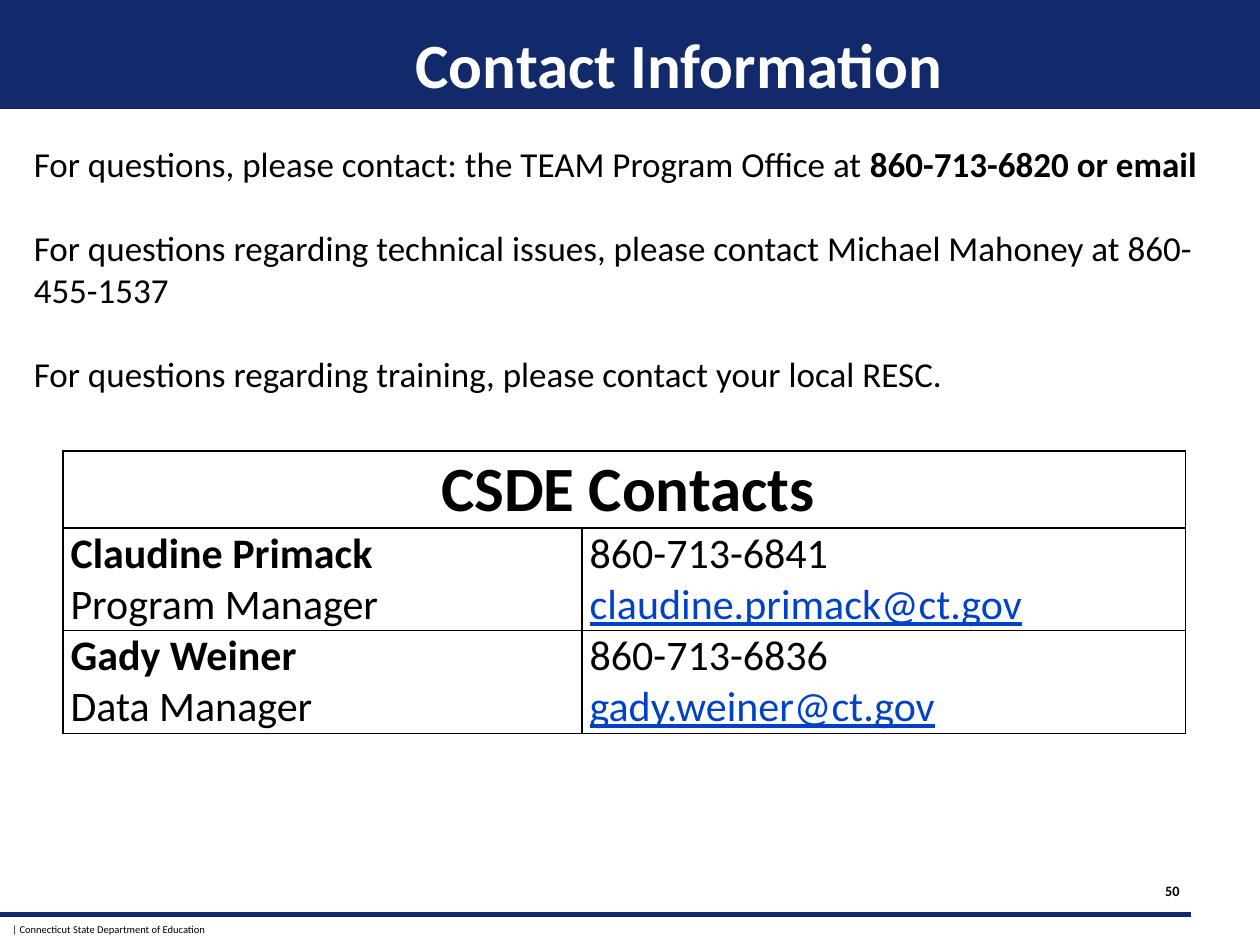
from dataclasses import dataclass

from lxml.etree import SubElement
from pptx import Presentation
from pptx.dml.color import RGBColor
from pptx.enum.shapes import MSO_CONNECTOR, MSO_SHAPE
from pptx.enum.text import MSO_ANCHOR, PP_ALIGN
from pptx.oxml.ns import qn
from pptx.util import Inches, Pt


@dataclass(frozen=True)
class Theme:
    """Colours, font and type sizes of the slide."""

    navy: str = "122A6C"
    black: str = "000000"
    white: str = "FFFFFF"
    link: str = "0042C7"
    font: str = "Calibri"
    heading: float = 36
    contact: float = 24
    body: float = 20
    number: float = 8.2
    footer: float = 6


THEME = Theme()

MESSAGES = [
    [("For questions, please contact: the TEAM Program Office at ", {}),
     ("860-713-6820 or email", {"bold": True})],
    [("For questions regarding technical issues, please contact "
      "Michael Mahoney at 860-455-1537", {})],
    [("For questions regarding training, please contact your local RESC.", {})],
]

CONTACTS = [
    ("Claudine Primack", "Program Manager", "860-713-6841", "claudine.primack@ct.gov"),
    ("Gady Weiner", "Data Manager", "860-713-6836", "gady.weiner@ct.gov"),
]


def set_attributes(target, values):
    """Set each named attribute of the target."""
    for name, value in values.items():
        setattr(target, name, value)


def box(left, top, width, height):
    """Return a position and size in inches."""
    return [Inches(value) for value in (left, top, width, height)]


def write(frame, paragraphs, size, color=THEME.black, align=PP_ALIGN.LEFT, gap=0):
    """Fill a text frame with paragraphs made of (text, format) runs."""
    frame.word_wrap = True
    for index, runs in enumerate(paragraphs):
        paragraph = frame.add_paragraph() if index else frame.paragraphs[0]
        paragraph.alignment = align
        paragraph.space_before = Pt(gap if index else 0)
        for text, values in runs:
            run = paragraph.add_run()
            run.text = text
            style = {"name": THEME.font, "size": Pt(size), "bold": False, **values}
            tint = style.pop("color", color)
            set_attributes(run.font, style)
            run.font.color.rgb = RGBColor.from_string(tint)


def add_text(slide, position, paragraphs, size, margin=0.1, **options):
    """Add a text box with the given side margins."""
    frame = slide.shapes.add_textbox(*box(*position)).text_frame
    set_attributes(frame, {"margin_left": Inches(margin), "margin_right": Inches(margin)})
    write(frame, paragraphs, size, **options)


def add_band(slide):
    """Add the navy band behind the title."""
    band = slide.shapes.add_shape(MSO_SHAPE.RECTANGLE, *box(0, 0, 10, 0.85))
    band.shadow.inherit = False
    band.fill.solid()
    band.fill.fore_color.rgb = RGBColor.from_string(THEME.navy)
    band.line.color.rgb = RGBColor.from_string(THEME.navy)
    band.line.width = Pt(2)


def add_rule(slide):
    """Add the line above the footer."""
    rule = slide.shapes.add_connector(MSO_CONNECTOR.STRAIGHT, *box(0, 7.26, 9.45, 7.26))
    rule.line.color.rgb = RGBColor.from_string(THEME.navy)
    rule.line.width = Pt(3)
    SubElement(rule.element.spPr, qn("a:effectLst"))


def add_title(slide, text):
    """Place the title in front of the band."""
    title = slide.shapes.title
    title.element.getparent().append(title.element)
    left, top, width, height = box(0.08, 0.2, 9, 0.61)
    set_attributes(title, {"left": left, "top": top, "width": width, "height": height})
    set_attributes(title.text_frame, {
        "margin_left": Inches(1.62), "margin_right": 0, "margin_top": 0,
        "margin_bottom": 0, "vertical_anchor": MSO_ANCHOR.MIDDLE})
    write(title.text_frame, [[(text, {"bold": True})]], THEME.heading,
          color=THEME.white, align=PP_ALIGN.CENTER)


def format_cell(cell):
    """Give a cell thin black borders, no fill and tight margins."""
    set_attributes(cell, {"margin_left": Inches(0.06), "margin_right": 0,
                          "margin_top": 0, "margin_bottom": 0})
    properties = cell._tc.get_or_add_tcPr()
    for side in ("lnL", "lnR", "lnT", "lnB"):
        border = SubElement(properties, qn(f"a:{side}"), w=str(Pt(1)))
        SubElement(SubElement(border, qn("a:solidFill")), qn("a:srgbClr"), val=THEME.black)
    cell.fill.background()


def add_contacts(slide):
    """Add the table of contacts under a merged heading."""
    table = slide.shapes.add_table(len(CONTACTS) + 1, 2, *box(0.5, 3.58, 8.91, 2.2)).table
    set_attributes(table, {"first_row": False, "horz_banding": False})
    for column, width in zip(table.columns, (4.12, 4.79)):
        column.width = Inches(width)
    for row, height in zip(table.rows, (0.6, 0.8, 0.8)):
        row.height = Inches(height)
    for cell in table.iter_cells():
        format_cell(cell)
    heading = table.cell(0, 0)
    heading.merge(table.cell(0, 1))
    write(heading.text_frame, [[("CSDE Contacts", {"bold": True})]], THEME.heading,
          align=PP_ALIGN.CENTER)
    for row, (name, role, phone, email) in enumerate(CONTACTS, start=1):
        person = [[(name, {"bold": True})], [(role, {})]]
        details = [[(phone, {})], [(email, {"color": THEME.link, "underline": True})]]
        for column, lines in enumerate((person, details)):
            write(table.cell(row, column).text_frame, lines, THEME.contact)


def main():
    """Build the contact slide and save it."""
    presentation = Presentation()
    set_attributes(presentation, {"slide_width": Inches(10), "slide_height": Inches(7.5)})
    slide = presentation.slides.add_slide(presentation.slide_layouts[5])
    add_band(slide)
    add_rule(slide)
    add_text(slide, (0, 7.28, 5, 0.2),
             [[("| Connecticut State Department of Education", {})]], THEME.footer)
    add_text(slide, (9.14, 6.95, 0.33, 0.25), [[("50", {"bold": True})]], THEME.number,
             margin=0.04, align=PP_ALIGN.CENTER)
    add_title(slide, "Contact Information")
    add_contacts(slide)
    add_text(slide, (0.17, 1.08, 9.47, 2.12), MESSAGES, THEME.body, gap=24)
    presentation.save("out.pptx")


if __name__ == "__main__":
    main()
